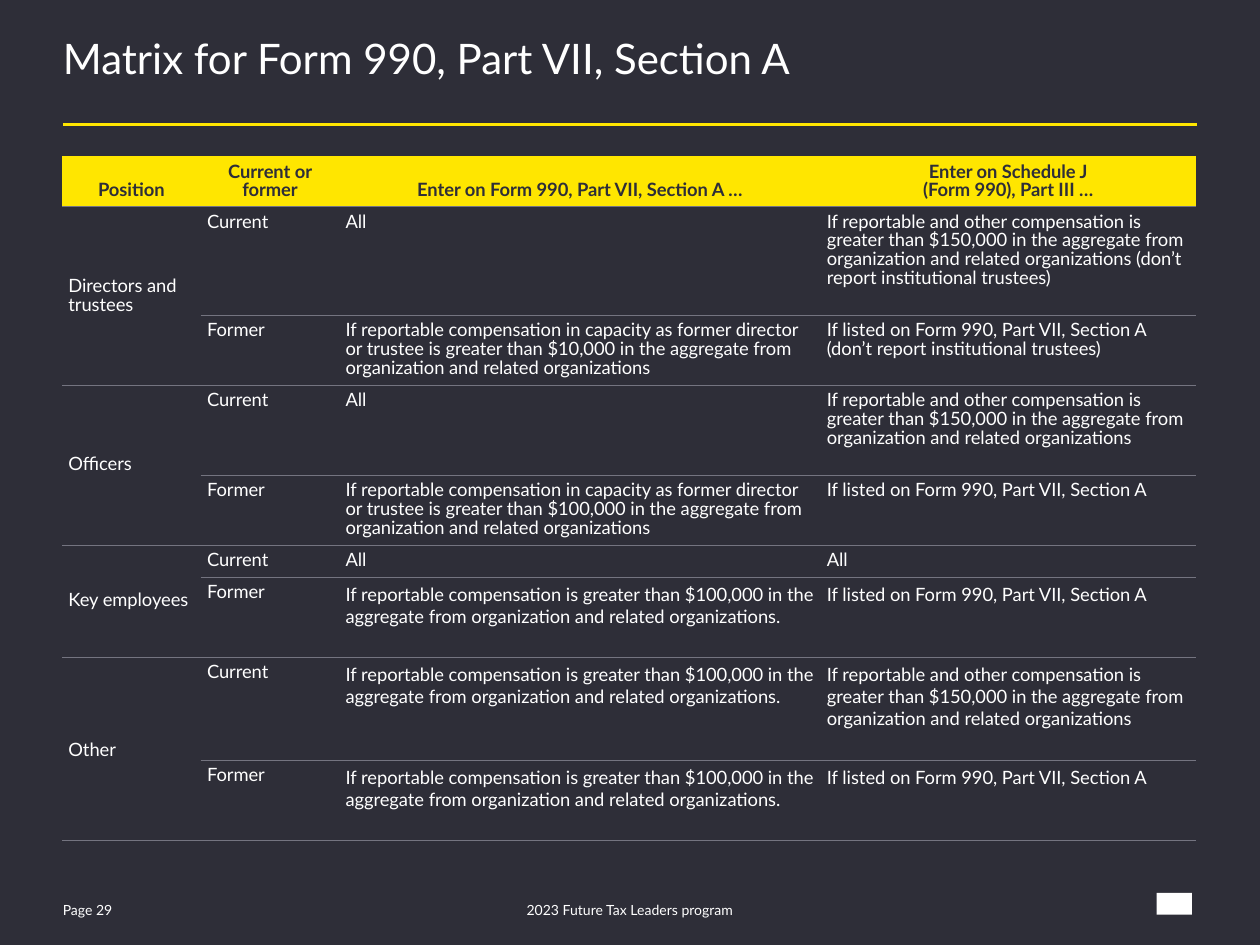
import pptx
import pptx.util
import pptx.dml.color
import pptx.enum.shapes
import pptx.enum.text
import lxml.etree

COLORS = {"night": "2E2E38", "yellow": "FFE600", "white": "FFFFFF", "rule": "747480"}
ANCHOR = pptx.enum.text.MSO_ANCHOR
ALIGN = pptx.enum.text.PP_ALIGN

deck = pptx.Presentation()
deck.slide_width = pptx.util.Inches(10)
deck.slide_height = pptx.util.Inches(7.5)
across = deck.slide_width / 100
down = deck.slide_height / 100


def color(name):
    return pptx.dml.color.RGBColor.from_string(COLORS[name])


def write(frame, text, size, ink, align=ALIGN.LEFT, spacing=1.0, bold=False):
    frame.text = text
    frame.word_wrap = True
    for paragraph in frame.paragraphs:
        paragraph.alignment = align
        paragraph.line_spacing = spacing
        for run in paragraph.runs:
            run.font.name = "Lato"
            run.font.size = pptx.util.Pt(size)
            run.font.bold = bold
            run.font.color.rgb = color(ink)


slide = deck.slides.add_slide(deck.slide_layouts[6])
slide.background.fill.solid()
slide.background.fill.fore_color.rgb = color("night")

title = slide.shapes.add_textbox(int(5 * across), int(4.27 * down), int(90 * across), int(8.67 * down))
frame = title.text_frame
frame.margin_left = frame.margin_right = frame.margin_top = frame.margin_bottom = 0
write(frame, "Matrix for Form 990, Part VII, Section A", 24, "white", spacing=0.85)

title_rule = slide.shapes.add_connector(
    pptx.enum.shapes.MSO_CONNECTOR.STRAIGHT,
    int(5 * across), int(13.2 * down), int(95 * across), int(13.2 * down))
title_rule.line.color.rgb = color("yellow")
title_rule.line.width = pptx.util.Pt(1.5)
lxml.etree.SubElement(title_rule._element.spPr, pptx.oxml.ns.qn("a:effectLst"))

ALL = "All"
LISTED = "If listed on Form 990, Part VII, Section A"
OVER_150 = ("If reportable and other compensation is greater than $150,000 in the aggregate "
            "from organization and related organizations")
OVER_100 = ("If reportable compensation is greater than $100,000 in the aggregate "
            "from organization and related organizations.")
AS_FORMER = ("If reportable compensation in capacity as former director or trustee is greater than "
             "{} in the aggregate from organization and related organizations")
NO_INSTITUTIONS = " (don’t report institutional trustees)"

matrix_rows = [
    ["Position", "Current or former", "Enter on Form 990, Part VII, Section A …",
     "Enter on Schedule J\v(Form 990), Part III …"],
    ["Directors and trustees", "Current", ALL, OVER_150 + NO_INSTITUTIONS],
    ["", "Former", AS_FORMER.format("$10,000"), LISTED + NO_INSTITUTIONS],
    ["Officers", "Current", ALL, OVER_150],
    ["", "Former", AS_FORMER.format("$100,000"), LISTED],
    ["Key employees", "Current", ALL, ALL],
    ["", "Former", OVER_100, LISTED],
    ["Other", "Current", OVER_100, OVER_150],
    ["", "Former", OVER_100, LISTED],
]
column_shares = [11, 11, 38.2, 29.8]
row_shares = [5.4, 11.5, 7.4, 9.5, 7.4, 3.4, 8.5, 10.9, 8.5]

matrix_frame = slide.shapes.add_table(
    len(row_shares), len(column_shares), int(4.93 * across), int(16.5 * down),
    int(sum(column_shares) * across), int(sum(row_shares) * down))
matrix = matrix_frame.table
style_id = matrix._tbl.tblPr.find(pptx.oxml.ns.qn("a:tableStyleId"))
style_id.text = "{2D5ABB26-0587-4C30-8999-92F81FD0307C}"
matrix.horz_banding = False

for column, share in zip(matrix.columns, column_shares):
    column.width = int(share * across)
for row, share in zip(matrix.rows, row_shares):
    row.height = int(share * down)
for top in range(1, len(row_shares), 2):
    matrix.cell(top, 0).merge(matrix.cell(top + 1, 0))

border_xml = (
    '<a:lnB xmlns:a="http://schemas.openxmlformats.org/drawingml/2006/main" w="9525">'
    f'<a:solidFill><a:srgbClr val="{COLORS["rule"]}"/></a:solidFill></a:lnB>')

for r, texts in enumerate(matrix_rows):
    for c, text in enumerate(texts):
        header = r == 0
        cell = matrix.cell(r, c)
        cell.margin_left = cell.margin_right = int(0.5 * across)
        cell.margin_top = cell.margin_bottom = int(0.67 * down)
        cell.vertical_anchor = ANCHOR.BOTTOM if header else ANCHOR.MIDDLE if c == 0 else ANCHOR.TOP
        cell._tc.get_or_add_tcPr().append(pptx.oxml.parse_xml(border_xml))
        if header:
            cell.fill.solid()
            cell.fill.fore_color.rgb = color("yellow")
        else:
            cell.fill.background()
        if text:
            write(cell.text_frame, text, 10.5, "night" if header else "white",
                  ALIGN.CENTER if header else ALIGN.LEFT,
                  1.0 if r >= 6 and c != 1 else 0.85, header)

for text, left, width, align in [
    ("Page 29", 4, 7.3, ALIGN.LEFT),
    ("2023 Future Tax Leaders program", 33.1, 33.8, ALIGN.CENTER),
]:
    footer = slide.shapes.add_textbox(int(left * across), int(94.93 * down), int(width * across), int(2.67 * down))
    footer.text_frame.vertical_anchor = ANCHOR.MIDDLE
    write(footer.text_frame, text, 8, "white", align)

emblem = slide.shapes.add_shape(
    pptx.enum.shapes.MSO_SHAPE.RECTANGLE,
    int(91.8 * across), int(94.5 * down), int(2.8 * across), int(2.3 * down))
emblem.shadow.inherit = False
emblem.fill.solid()
emblem.fill.fore_color.rgb = color("white")
emblem.line.fill.background()

deck.save("out.pptx")
